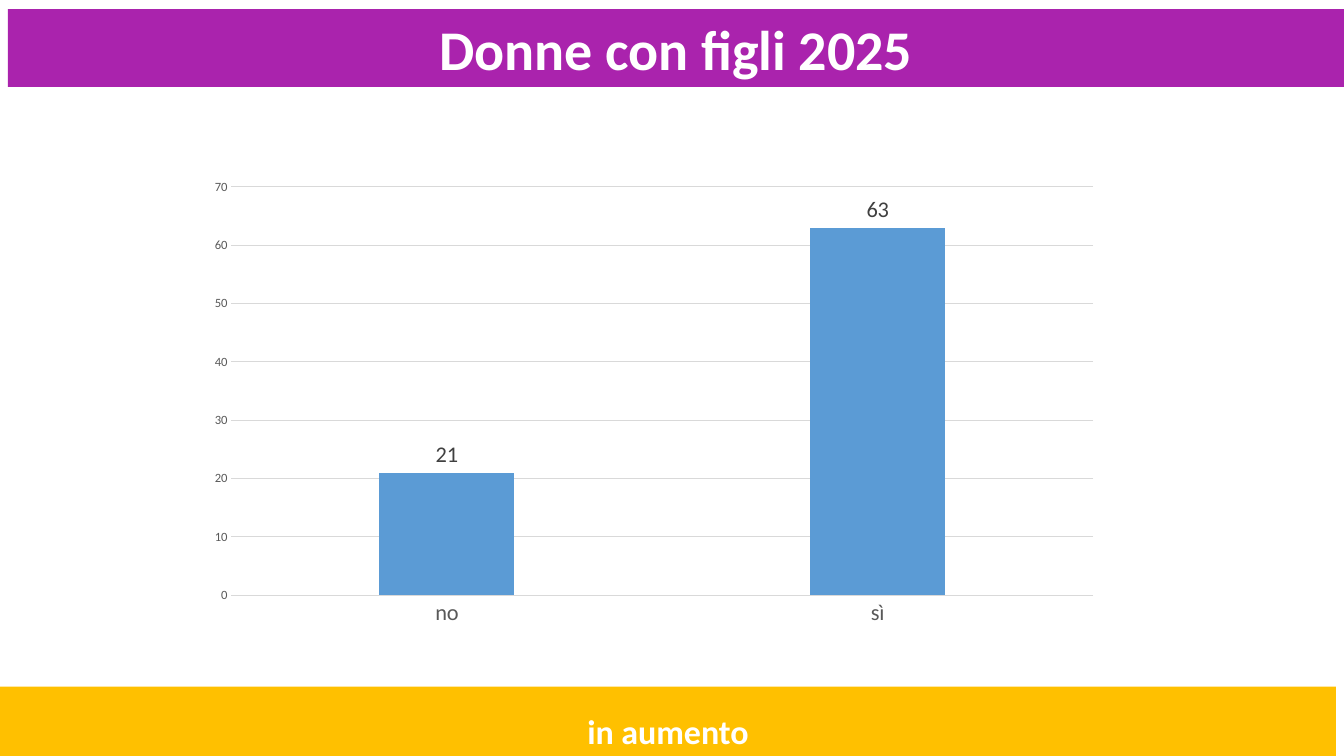
from dataclasses import dataclass

from pptx import Presentation
from pptx.chart.data import CategoryChartData
from pptx.dml.color import RGBColor
from pptx.enum.chart import XL_CHART_TYPE, XL_LABEL_POSITION, XL_TICK_MARK
from pptx.enum.shapes import MSO_SHAPE
from pptx.enum.text import MSO_ANCHOR, PP_ALIGN
from pptx.util import Cm, Pt

COLUMNS = XL_CHART_TYPE.COLUMN_CLUSTERED
OUTSIDE_END = XL_LABEL_POSITION.OUTSIDE_END
NO_TICK = XL_TICK_MARK.NONE
RECTANGLE = MSO_SHAPE.RECTANGLE
MIDDLE, BOTTOM = MSO_ANCHOR.MIDDLE, MSO_ANCHOR.BOTTOM
CENTER = PP_ALIGN.CENTER


@dataclass(frozen=True)
class Theme:
    font: str = "Calibri"
    purple: str = "AA23AD"
    amber: str = "FFC000"
    white: str = "FFFFFF"
    black: str = "000000"
    column: str = "5B9BD5"
    grid: str = "D9D9D9"
    axis_text: str = "595959"
    label_text: str = "404040"
    title_size: float = 40
    footer_size: float = 24.3
    category_size: float = 16
    value_size: float = 9
    chart_size: float = 10
    grid_width: float = 0.75


THEME = Theme()


def set_attributes(target, values):
    for name, value in values.items():
        setattr(target, name, value)


def style_font(font, size, color, bold=False):
    set_attributes(font, {"name": THEME.font, "size": Pt(size), "bold": bold})
    font.color.rgb = RGBColor.from_string(color)


def style_line(line, color):
    line.color.rgb = RGBColor.from_string(color)
    line.width = Pt(THEME.grid_width)


def add_band(slide, box, text, color, size, anchor):
    """Add a full-width coloured band with centred bold text."""
    shape = slide.shapes.add_shape(RECTANGLE, *map(Cm, box))
    shape.shadow.inherit = False
    shape.fill.solid()
    shape.fill.fore_color.rgb = RGBColor.from_string(color)
    shape.line.fill.background()

    frame = shape.text_frame
    set_attributes(frame, {"word_wrap": True, "vertical_anchor": anchor,
                           "margin_top": Cm(0.13), "margin_bottom": Cm(0.13)})
    paragraph = frame.paragraphs[0]
    paragraph.alignment = CENTER
    run = paragraph.add_run()
    run.text = text
    style_font(run.font, size, THEME.white, bold=True)


def style_axis(axis, size):
    set_attributes(axis, {"major_tick_mark": NO_TICK, "minor_tick_mark": NO_TICK})
    style_font(axis.tick_labels.font, size, THEME.axis_text)


def add_column_chart(slide, box, categories, values):
    data = CategoryChartData()
    data.categories = categories
    data.add_series("Series 1", values)
    chart = slide.shapes.add_chart(COLUMNS, *map(Cm, box), data).chart
    set_attributes(chart, {"has_legend": False, "has_title": False})
    style_font(chart.font, THEME.chart_size, THEME.black)

    # Axes
    style_axis(chart.category_axis, THEME.category_size)
    style_line(chart.category_axis.format.line, THEME.grid)
    value_axis = chart.value_axis
    style_axis(value_axis, THEME.value_size)
    set_attributes(value_axis, {"minimum_scale": 0, "maximum_scale": 70,
                                "major_unit": 10, "has_major_gridlines": True})
    value_axis.format.line.fill.background()
    style_line(value_axis.major_gridlines.format.line, THEME.grid)

    # Columns and their values
    plot = chart.plots[0]
    set_attributes(plot, {"gap_width": 219, "overlap": -27,
                          "vary_by_categories": False})
    series = plot.series[0]
    series.format.fill.solid()
    series.format.fill.fore_color.rgb = RGBColor.from_string(THEME.column)
    labels = series.data_labels
    set_attributes(labels, {"show_value": True, "position": OUTSIDE_END})
    style_font(labels.font, THEME.category_size, THEME.label_text)


def main():
    presentation = Presentation()
    set_attributes(presentation, {"slide_width": Cm(33.87),
                                  "slide_height": Cm(19.05)})
    slide = presentation.slides.add_slide(presentation.slide_layouts[6])

    # Heading
    add_band(slide, (0.2, 0.23, 33.67, 1.96), "Donne con figli 2025",
             THEME.purple, THEME.title_size, MIDDLE)

    # Closing remark
    add_band(slide, (0, 17.3, 33.67, 1.75), "in aumento",
             THEME.amber, THEME.footer_size, BOTTOM)

    # Women without and with children
    add_column_chart(slide, (4.95, 4.29, 23.06, 11.73), ("no", "sì"), (21, 63))

    presentation.save("out.pptx")


if __name__ == "__main__":
    main()
